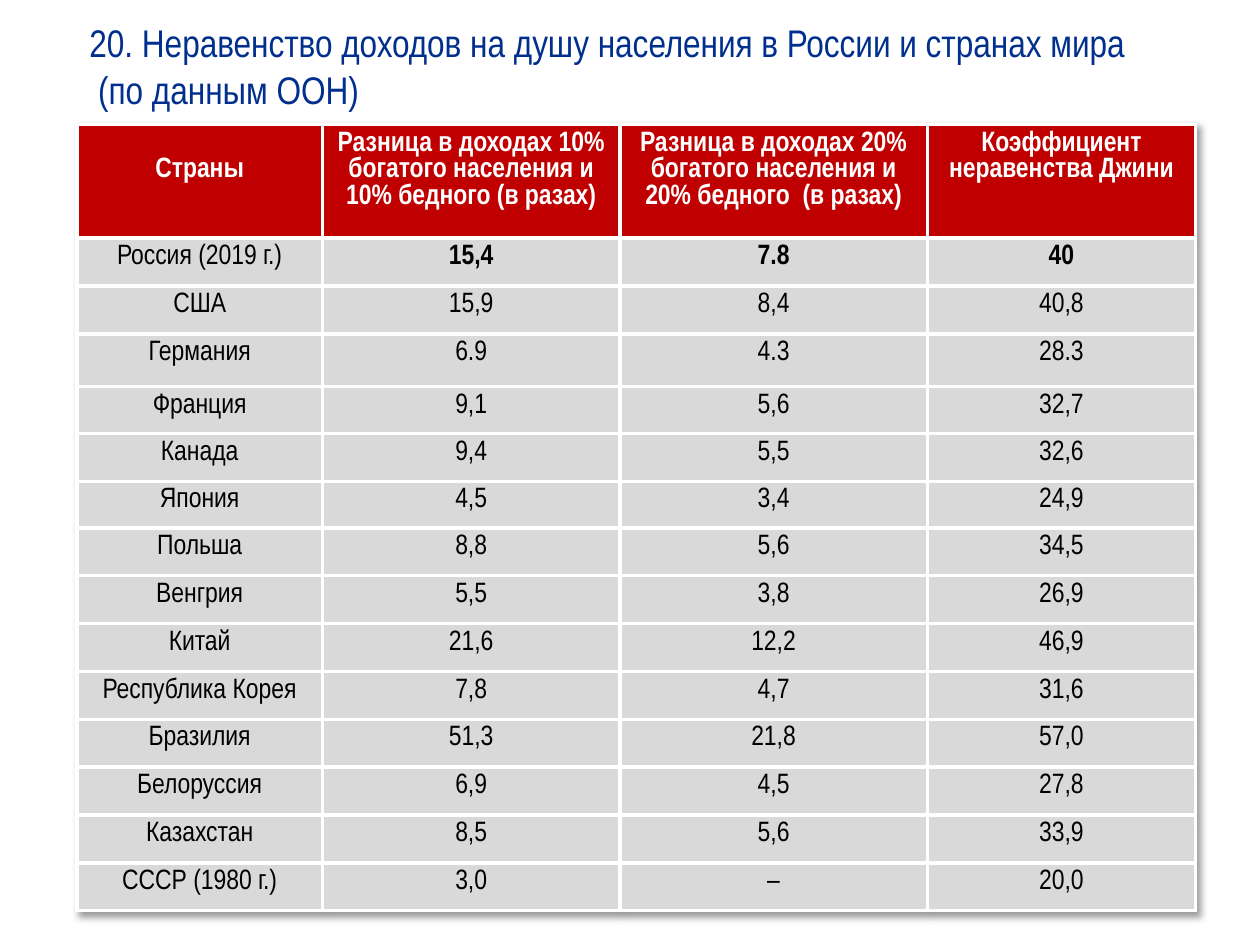
from dataclasses import dataclass
from lxml.etree import SubElement
from pptx import Presentation
from pptx.dml.color import RGBColor
from pptx.enum.text import MSO_ANCHOR, MSO_AUTO_SIZE, PP_ALIGN
from pptx.oxml.ns import qn
from pptx.slide import Slide
from pptx.table import Table, _Cell
from pptx.util import Inches, Pt

COLORS = {
    "title": "002F8E",
    "header": "C00000",
    "body": "D9D9D9",
    "white": "FFFFFF",
    "black": "000000",
}
FONT = "Arial Narrow"
COLUMN_WIDTHS = (1.95, 2.36, 2.44, 2.13)
HEADER_HEIGHT = 0.9
HEADERS = (
    "Страны",
    "Разница в доходах 10% богатого населения и\n10% бедного (в разах)",
    "Разница в доходах 20% богатого населения и\n20% бедного  (в разах)",
    "Коэффициент неравенства Джини",
)


@dataclass(frozen=True)
class Country:
    name: str
    decile_gap: str
    quintile_gap: str
    gini: str
    height: float = 0.38
    bold_values: bool = False


COUNTRIES = (
    Country("Россия (2019 г.)", "15,4", "7.8", "40", bold_values=True),
    Country("США", "15,9", "8,4", "40,8"),
    Country("Германия", "6.9", "4.3", "28.3", height=0.42),
    Country("Франция", "9,1", "5,6", "32,7", height=0.37),
    Country("Канада", "9,4", "5,5", "32,6"),
    Country("Япония", "4,5", "3,4", "24,9", height=0.37),
    Country("Польша", "8,8", "5,6", "34,5"),
    Country("Венгрия", "5,5", "3,8", "26,9"),
    Country("Китай", "21,6", "12,2", "46,9"),
    Country("Республика Корея", "7,8", "4,7", "31,6"),
    Country("Бразилия", "51,3", "21,8", "57,0"),
    Country("Белоруссия", "6,9", "4,5", "27,8"),
    Country("Казахстан", "8,5", "5,6", "33,9"),
    Country("СССР (1980 г.)", "3,0", "–", "20,0"),
)


def color(name: str) -> RGBColor:
    return RGBColor.from_string(COLORS[name])


def add_title(page: Slide, text: str) -> None:
    box = page.shapes.title
    box.left, box.top = Inches(0.61), Inches(0.1)
    box.width, box.height = Inches(9.05), Inches(0.84)
    frame = box.text_frame
    frame.text = text
    frame.word_wrap = True
    frame.auto_size = MSO_AUTO_SIZE.NONE
    frame.vertical_anchor = MSO_ANCHOR.MIDDLE
    paragraph = frame.paragraphs[0]
    paragraph.alignment = PP_ALIGN.LEFT
    for span in paragraph.runs:
        span.font.name = FONT
        span.font.size = Pt(22)
        span.font.color.rgb = color("title")


def set_borders(cell: _Cell, bottom: float) -> None:
    properties = cell._tc.get_or_add_tcPr()
    widths = {"a:lnL": 2.25, "a:lnR": 2.25, "a:lnT": 2.25, "a:lnB": bottom}
    for position, (tag, width) in enumerate(widths.items()):
        line = SubElement(properties, qn(tag), w=str(Pt(width)))
        fill = SubElement(line, qn("a:solidFill"))
        SubElement(fill, qn("a:srgbClr"), val=COLORS["white"])
        properties.insert(position, line)


def fill_cell(cell: _Cell, text: str, fill: str, ink: str, bold: bool, bottom: float) -> None:
    cell.fill.solid()
    cell.fill.fore_color.rgb = color(fill)
    set_borders(cell, bottom)
    cell.text_frame.text = text
    for paragraph in cell.text_frame.paragraphs:
        paragraph.alignment = PP_ALIGN.CENTER
        paragraph.line_spacing = 1.0
        for span in paragraph.runs:
            span.font.name = FONT
            span.font.size = Pt(16)
            span.font.bold = bold
            span.font.color.rgb = color(ink)


def add_shadow(table: Table) -> None:
    effects = SubElement(table._tbl.tblPr, qn("a:effectLst"))
    table._tbl.tblPr.insert(0, effects)
    shadow = SubElement(
        effects, qn("a:outerShdw"), blurRad=str(Pt(4)), dist=str(Pt(3)),
        dir="2700000", algn="tl", rotWithShape="0",
    )
    tint = SubElement(shadow, qn("a:srgbClr"), val=COLORS["black"])
    SubElement(tint, qn("a:alpha"), val="40000")


def add_income_table(page: Slide) -> None:
    heights = [HEADER_HEIGHT] + [country.height for country in COUNTRIES]
    table = page.shapes.add_table(
        len(heights), len(COLUMN_WIDTHS), Inches(0.61), Inches(0.99),
        Inches(sum(COLUMN_WIDTHS)), Inches(sum(heights)),
    ).table
    table.horz_banding = False
    for column, width in zip(table.columns, COLUMN_WIDTHS):
        column.width = Inches(width)
    for row, height in zip(table.rows, heights):
        row.height = Inches(height)
    for index, heading in enumerate(HEADERS):
        fill_cell(table.cell(0, index), heading, "header", "white", True, 3)
    table.cell(0, 0).margin_top = Inches(0.26)
    for number, country in enumerate(COUNTRIES, start=1):
        values = (country.name, country.decile_gap, country.quintile_gap, country.gini)
        for index, value in enumerate(values):
            bold = country.bold_values and index > 0
            fill_cell(table.cell(number, index), value, "body", "black", bold, 2.25)
    add_shadow(table)


def main() -> None:
    deck = Presentation()
    deck.slide_width, deck.slide_height = Inches(10), Inches(7.5)
    page = deck.slides.add_slide(deck.slide_layouts[5])
    add_title(
        page,
        "20. Неравенство доходов на душу населения в России и странах мира\v (по данным ООН)",
    )
    add_income_table(page)
    deck.save("out.pptx")


if __name__ == "__main__":
    main()
